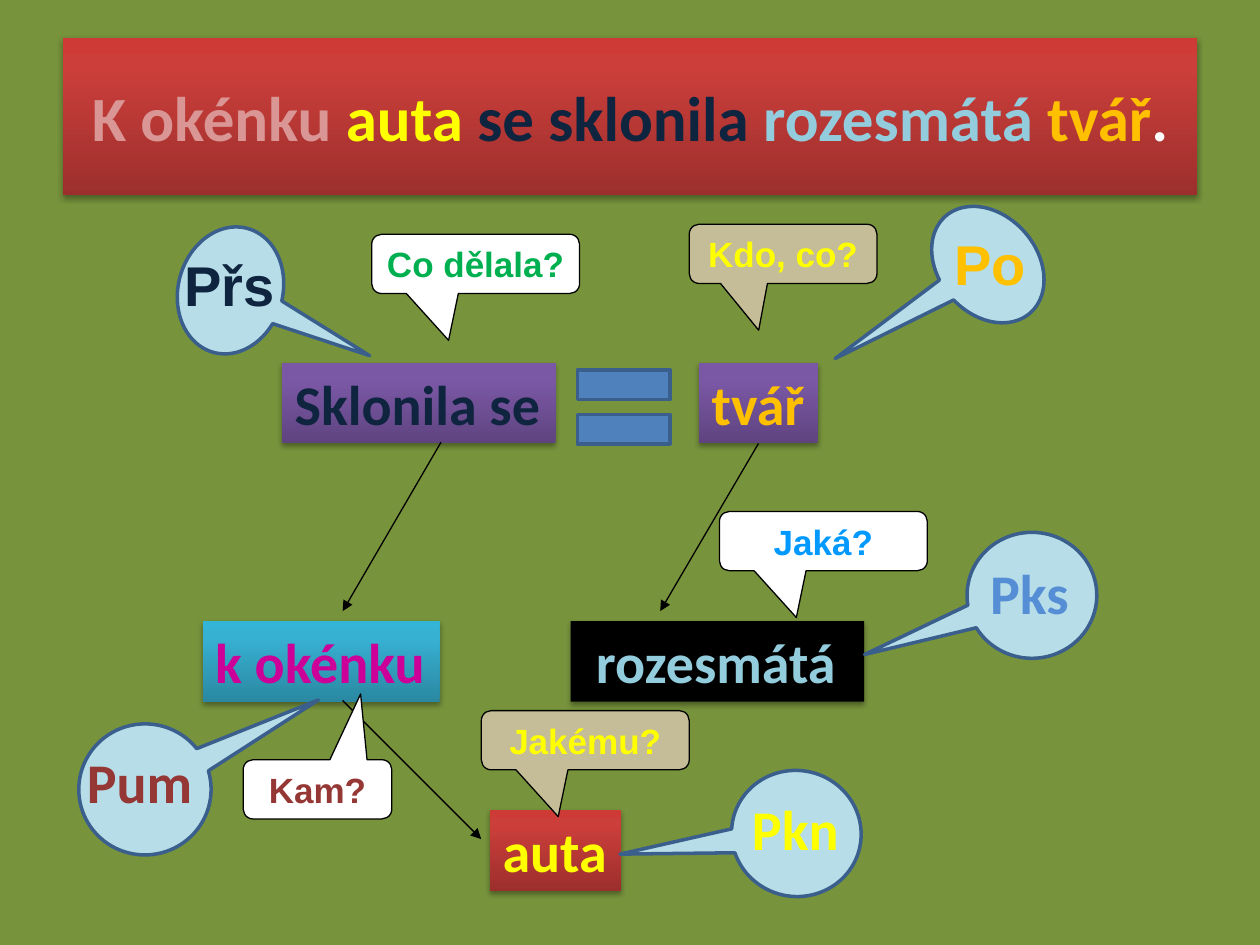
"""Build a Czech sentence-analysis diagram slide."""
from lxml.etree import SubElement
from pptx import Presentation
from pptx.dml.color import RGBColor
from pptx.enum.shapes import MSO_CONNECTOR, MSO_SHAPE
from pptx.enum.text import MSO_ANCHOR, MSO_AUTO_SIZE, PP_ALIGN
from pptx.oxml.ns import qn
from pptx.util import Inches, Pt

COLORS = {
    "green": "77933C", "white": "FFFFFF", "black": "000000", "rose": "D99694",
    "yellow": "FFFF00", "navy": "0F243E", "aqua": "93CDDD", "gold": "FFC000",
    "magenta": "CC0099", "maroon": "953735", "sky": "558ED5", "leaf": "00B050",
    "azure": "0099FF", "sand": "C4BD97", "bubble": "B7DEE8", "outline": "3A5F8C",
    "blue": "4F81BD",
}
GRADIENTS = {
    "red": ("9C2F2D", "CB3E3A", "CE3B37"),
    "purple": ("5F4480", "7B58A6", "7C57A8"),
    "teal": ("2A88A2", "37B1D2", "34B4D6"),
}
STOPS = (0, 80, 100)

TITLE = [("K okénku", "rose"), (" auta ", "yellow"), ("se sklonila ", "navy"),
         ("rozesmátá ", "aqua"), ("tvář", "gold"), (".", "white")]
WORDS = [
    ("Sklonila se", "navy", "purple", (2.24, 2.88, 2.17)),
    ("tvář", "gold", "purple", (5.55, 2.88, 0.94)),
    ("k okénku", "magenta", "teal", (1.61, 4.93, 1.88)),
    (" rozesmátá", "aqua", "black", (4.53, 4.93, 2.33)),
    ("auta", "yellow", "red", (3.89, 6.43, 1.04)),
]
BUBBLES = [
    ((1.32, 1.89, 1.02, 0.83), 285.5, False, (-0.2, 1.45),
     "Přs", "navy", "Arial", (1.36, 1.94, 0.93)),
    ((7.33, 1.71, 1.02, 0.78), 48.9, False, (-0.23, 1.8),
     "Po", "gold", "Arial", (7.47, 1.77, 0.78)),
    ((0.63, 5.74, 1.04, 1.05), 266.5, False, (0.6, 1.35),
     "Pum", "maroon", "Calibri", (0.59, 5.88, 1.05)),
    ((5.82, 6.1, 1, 1.03), 282.8, True, (0.47, -1.29),
     "Pkn", "yellow", "Calibri", (5.87, 6.26, 0.9)),
    ((7.69, 4.21, 1, 1.03), 270, True, (0.47, -1.29),
     "Pks", "sky", "Calibri", (7.76, 4.38, 0.83)),
]
ARROWS = [
    ((3.5, 3.51), (2.72, 4.85), None),
    ((6.02, 3.52), (5.24, 4.85), "tvář"),
    ((2.72, 5.56), (3.82, 6.66), None),
]
DOWN, UP = (-0.13, 1.29), (0.29, -1.61)
QUESTIONS = [
    ("Kdo, co?", "yellow", "sand", (5.47, 1.78, 1.49), DOWN),
    ("Co dělala?", "leaf", "white", (2.95, 1.86, 1.65), DOWN),
    ("Kam?", "maroon", "white", (1.93, 6.03, 1.18), UP),
    ("Jakému?", "yellow", "sand", (3.82, 5.64, 1.65), DOWN),
    ("Jaká?", "azure", "white", (5.71, 4.06, 1.65), DOWN),
]
WORD_HEIGHT, QUESTION_HEIGHT = 0.64, 0.47


def rgb(name):
    return RGBColor.from_string(COLORS[name])


def add_color(parent, value):
    return SubElement(parent, qn("a:srgbClr"), val=value)


def write(shape, runs, size, font, align=PP_ALIGN.CENTER, fit=False):
    frame = shape.text_frame
    settings = {"word_wrap": not fit, "vertical_anchor": MSO_ANCHOR.MIDDLE}
    if fit:
        settings.update(auto_size=MSO_AUTO_SIZE.SHAPE_TO_FIT_TEXT,
                        vertical_anchor=MSO_ANCHOR.TOP)
    for name, value in settings.items():
        setattr(frame, name, value)
    paragraph = frame.paragraphs[0]
    paragraph.alignment = align
    for text, color in runs:
        run = paragraph.add_run()
        run.text = text
        for name, value in {"size": Pt(size), "name": font, "bold": True}.items():
            setattr(run.font, name, value)
        run.font.color.rgb = rgb(color)


def add_figure(slide, kind, box, fill, line=None, width=0.75):
    shape = slide.shapes.add_shape(kind, *map(Inches, box))
    shape.shadow.inherit = False
    shape.fill.solid()
    shape.fill.fore_color.rgb = rgb(fill)
    if line:
        shape.line.color.rgb = rgb(line)
        shape.line.width = Pt(width)
    else:
        shape.line.fill.background()
    return shape


def add_panel(slide, box, fill):
    shape = add_figure(slide, MSO_SHAPE.RECTANGLE, box, "black")
    properties = shape._element.spPr
    if fill in GRADIENTS:
        solid = properties.find(qn("a:solidFill"))
        gradient = SubElement(properties, qn("a:gradFill"), rotWithShape="1")
        properties.replace(solid, gradient)
        stops = SubElement(gradient, qn("a:gsLst"))
        for position, value in zip(STOPS, GRADIENTS[fill]):
            add_color(SubElement(stops, qn("a:gs"), pos=str(position * 1000)), value)
        SubElement(gradient, qn("a:lin"), ang=str(270 * 60000), scaled="0")
    shadow = SubElement(properties.find(qn("a:effectLst")), qn("a:outerShdw"),
                        blurRad=str(Pt(3.1)), dist=str(Pt(1.8)),
                        dir=str(90 * 60000), rotWithShape="0")
    SubElement(add_color(shadow, COLORS["black"]), qn("a:alpha"), val="35000")
    return shape


def add_bubble(slide, box, rotation, flipped, tip, text, color, font, label_box):
    shape = add_figure(slide, MSO_SHAPE.OVAL_CALLOUT, box, "bubble", "outline", 2)
    shape.rotation = rotation
    if flipped:
        shape._element.spPr.xfrm.set("flipH", "1")
    for index, value in enumerate(tip):
        shape.adjustments[index] = value
    label = slide.shapes.add_textbox(*map(Inches, (*label_box, WORD_HEIGHT)))
    align = PP_ALIGN.CENTER if font == "Arial" else PP_ALIGN.LEFT
    write(label, [(text, color)], 32, font, align, fit=True)


def add_arrow(slide, start, end, source):
    arrow = slide.shapes.add_connector(
        MSO_CONNECTOR.STRAIGHT, *map(Inches, (*start, *end)))
    arrow.line.color.rgb = rgb("black")
    arrow.line.width = Pt(0.75)
    SubElement(arrow.line._get_or_add_ln(), qn("a:tailEnd"), type="triangle")
    SubElement(arrow._element.spPr, qn("a:effectLst"))
    if source is not None:
        arrow.begin_connect(source, 2)


def main():
    presentation = Presentation()
    presentation.slide_width, presentation.slide_height = Inches(10), Inches(7.5)
    slide = presentation.slides.add_slide(presentation.slide_layouts[6])
    slide.background.fill.solid()
    slide.background.fill.fore_color.rgb = rgb("green")

    write(add_panel(slide, (0.5, 0.3, 9, 1.25), "red"), TITLE, 36, "Calibri")
    add_figure(slide, MSO_SHAPE.MATH_EQUAL, (4.45, 2.73, 1, 1), "blue", "outline", 2)
    words = {}
    for text, color, fill, box in WORDS:
        words[text] = add_panel(slide, (*box, WORD_HEIGHT), fill)
        write(words[text], [(text, color)], 32, "Calibri", PP_ALIGN.LEFT, fit=True)
    for bubble in BUBBLES:
        add_bubble(slide, *bubble)
    for start, end, source in ARROWS:
        add_arrow(slide, start, end, words.get(source))
    for text, color, fill, box, tip in QUESTIONS:
        shape = add_figure(slide, MSO_SHAPE.ROUNDED_RECTANGULAR_CALLOUT,
                           (*box, QUESTION_HEIGHT), fill, "black")
        for index, value in enumerate(tip):
            shape.adjustments[index] = value
        write(shape, [(text, color)], 20, "Arial")
    presentation.save("out.pptx")


if __name__ == "__main__":
    main()
